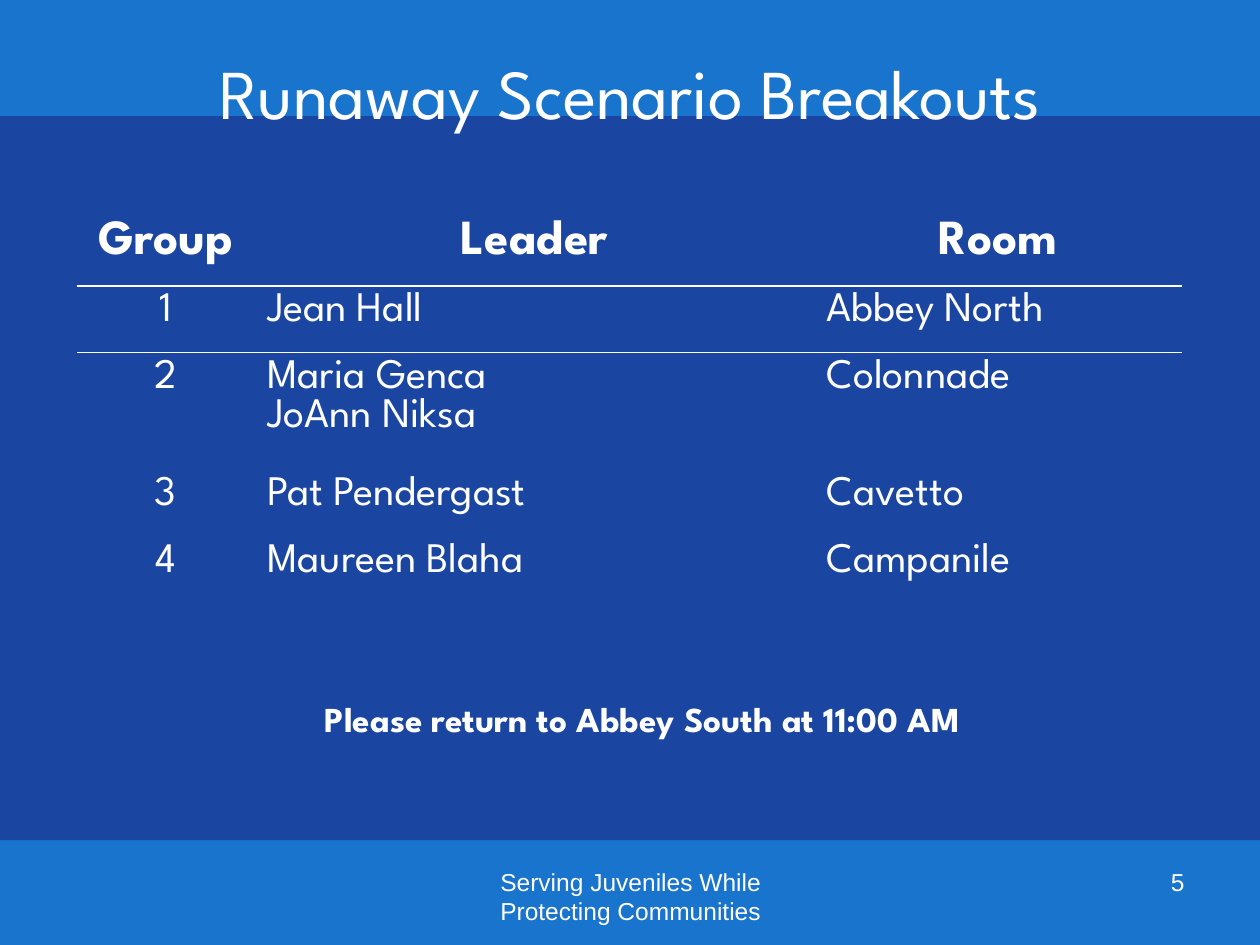
from dataclasses import dataclass

from lxml import etree
from pptx import Presentation
from pptx.dml.color import RGBColor
from pptx.enum.shapes import MSO_SHAPE
from pptx.enum.text import MSO_ANCHOR, PP_ALIGN
from pptx.oxml.ns import qn
from pptx.util import Cm, Pt

RECT = MSO_SHAPE.RECTANGLE
TOP, BOTTOM = MSO_ANCHOR.TOP, MSO_ANCHOR.BOTTOM
LEFT, CENTER, RIGHT = PP_ALIGN.LEFT, PP_ALIGN.CENTER, PP_ALIGN.RIGHT
NO_GRID = "{2D5ABB26-0587-4C30-8999-92F81FD0307C}"


@dataclass(frozen=True)
class Theme:
    back: str = "1874CD"
    panel: str = "1C3290"
    text: str = "FFFFFF"
    head: str = "League Spartan"
    foot: str = "Arial"
    title: int = 40
    label: int = 28
    body: int = 24
    note: int = 20
    small: int = 14


THEME = Theme()
ROWS = [
    ("Group", "Leader", "Room"),
    ("1", "Jean Hall", "Abbey North"),
    ("2", "Maria Genca\nJoAnn Niksa", "Colonnade"),
    ("3", "Pat Pendergast", "Cavetto"),
    ("4", "Maureen Blaha", "Campanile"),
]
WIDTHS = (3.58, 11.28, 7.42)
HEIGHTS = (1.32, 1.35, 2.36, 1.35, 1.35)
RULED = (0, 1)


def style(frame, size, font, align, bold=False):
    for para in frame.paragraphs:
        para.alignment = align
        for run in para.runs:
            run.font.size = Pt(size)
            run.font.name = font
            run.font.bold = bold
            run.font.color.rgb = RGBColor.from_string(THEME.text)


def add_text(slide, box, text, size, font, align, anchor=TOP, bold=False):
    shape = slide.shapes.add_textbox(*map(Cm, box))
    frame = shape.text_frame
    frame.word_wrap = True
    frame.vertical_anchor = anchor
    frame.text = text
    style(frame, size, font, align, bold)
    return frame


def add_panel(slide, box):
    panel = slide.shapes.add_shape(RECT, *map(Cm, box))
    panel.shadow.inherit = False
    panel.line.fill.background()
    panel.fill.solid()
    panel.fill.fore_color.rgb = RGBColor.from_string(THEME.panel)
    color = panel.fill._xPr.find(".//" + qn("a:srgbClr"))
    etree.SubElement(color, qn("a:alpha"), val="69000")


def add_title(slide, box):
    frame = add_text(slide, box, "Runaway Scenario Breakouts",
                     THEME.title, THEME.head, CENTER, BOTTOM)
    frame.margin_bottom = 0
    frame.paragraphs[0].line_spacing = 1.5


def add_rule(cell):
    line = etree.Element(qn("a:lnB"), w=str(Pt(1)))
    fill = etree.SubElement(line, qn("a:solidFill"))
    etree.SubElement(fill, qn("a:srgbClr"), val=THEME.text)
    cell._tc.get_or_add_tcPr().insert(0, line)


def add_groups(slide, left, top):
    table = slide.shapes.add_table(
        len(ROWS), len(WIDTHS), Cm(left), Cm(top),
        Cm(sum(WIDTHS)), Cm(sum(HEIGHTS))).table
    table.first_row = table.horz_banding = False
    table._tbl.tblPr.find(qn("a:tableStyleId")).text = NO_GRID
    for col, width in zip(table.columns, WIDTHS):
        col.width = Cm(width)
    for r, (row, height) in enumerate(zip(ROWS, HEIGHTS)):
        table.rows[r].height = Cm(height)
        head = r == 0
        for c, text in enumerate(row):
            cell = table.cell(r, c)
            cell.fill.background()
            cell.text_frame.text = text
            style(cell.text_frame, THEME.label if head else THEME.body,
                  THEME.head, CENTER if head or c == 0 else LEFT, head)
            if r in RULED:
                add_rule(cell)


def add_footer(slide, top, height):
    add_text(slide, (8.69, top, 8.05, height),
             "Serving Juveniles While Protecting Communities",
             THEME.small, THEME.foot, CENTER)
    add_text(slide, (18.21, top, 5.92, height), "5",
             THEME.small, THEME.foot, RIGHT)


def main():
    deck = Presentation()
    deck.slide_width, deck.slide_height = Cm(25.4), Cm(19.05)
    slide = deck.slides.add_slide(deck.slide_layouts[6])
    fill = slide.background.fill
    fill.solid()
    fill.fore_color.rgb = RGBColor.from_string(THEME.back)

    # Backdrop and footer
    add_panel(slide, (0, 2.34, 25.4, 14.6))
    add_footer(slide, 17.35, 1.32)

    # Title, groups and closing note
    add_title(slide, (0, 0.05, 25.4, 2.64))
    add_groups(slide, 1.55, 4.32)
    add_text(slide, (4.6, 13.92, 16.71, 1.12),
             "Please return to Abbey South at 11:00 AM",
             THEME.note, THEME.head, CENTER, BOTTOM, True)
    deck.save("out.pptx")


if __name__ == "__main__":
    main()
